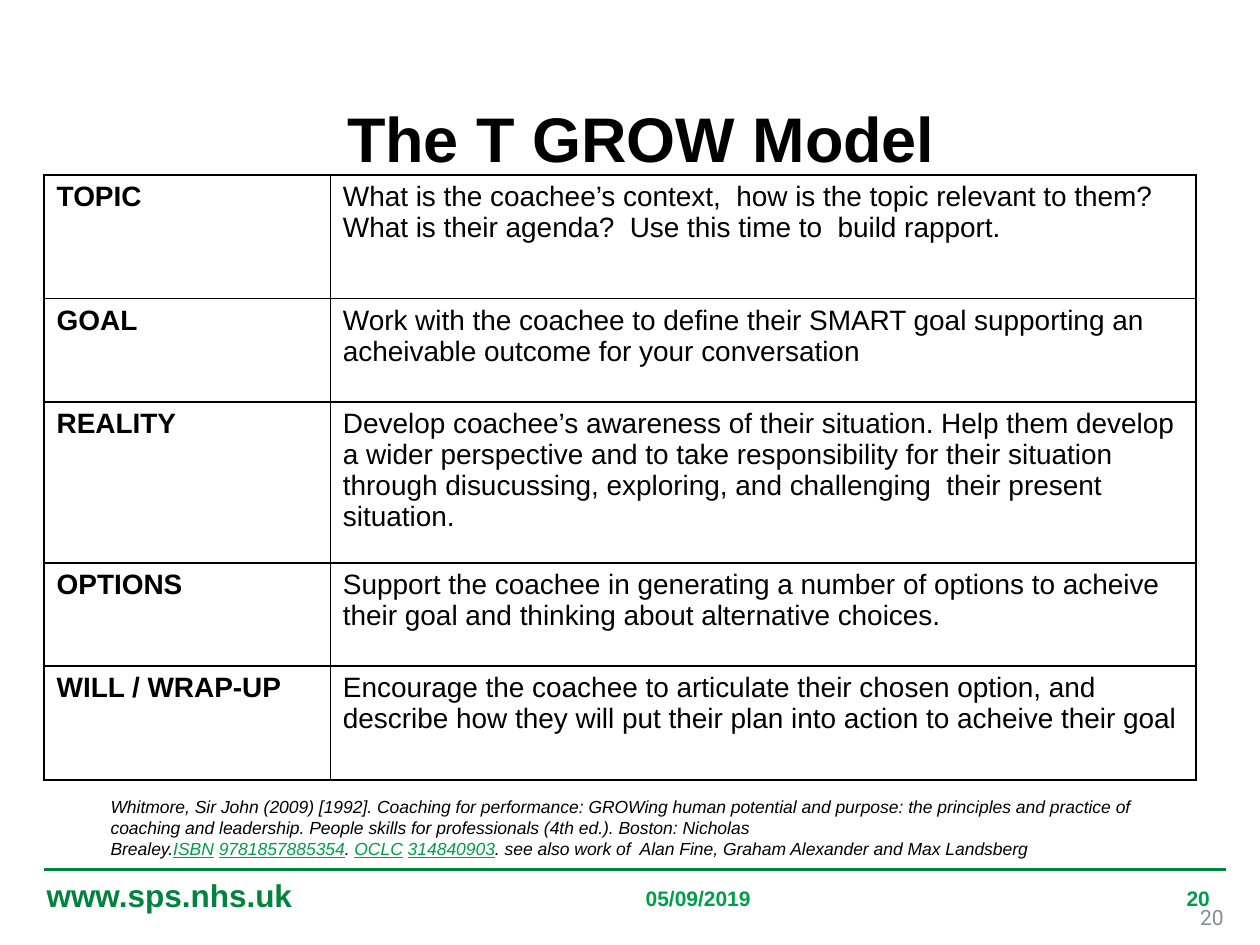
from dataclasses import dataclass

import pptx
import pptx.dml.color
import pptx.enum.shapes
import pptx.enum.text
import pptx.oxml
import pptx.oxml.ns
import pptx.util

Cm = pptx.util.Cm
Pt = pptx.util.Pt
Align = pptx.enum.text.PP_ALIGN

COLOURS = {
    "black": "000000",
    "rule": "01833E",
    "green": "009E49",
    "grey": "898C9C",
}
NBSP = chr(160)


@dataclass
class Label:
    text: str
    left: float
    top: float
    width: float
    height: float
    size: int
    colour: str
    align: Align = Align.LEFT
    bold: bool = True
    face: str = "Arial"


@dataclass
class Stage:
    name: str
    advice: str
    height: float


LABELS = [
    Label("www.sps.nhs.uk", 0.69, 17.53, 11.2, 1.02, 18, "rule"),
    Label("05/09/2019", 10.9, 17.73, 6.35, 0.89, 12, "green", Align.CENTER),
    Label("20", 18.11, 17.73, 6.53, 0.89, 12, "green", Align.RIGHT),
    Label("20", 19.13, 18.11, 5.79, 1.02, 12, "grey", Align.RIGHT, False, "Roboto"),
]

STAGES = [
    Stage("TOPIC", "What is the coachee’s context,  how is the topic relevant to them?  "
          "What is their agenda?  Use this time to  build rapport.", 2.49),
    Stage("GOAL", "Work with the coachee to define their SMART goal supporting an "
          "acheivable outcome for your conversation", 2.08),
    Stage("REALITY", "Develop coachee’s awareness of their situation. Help them develop "
          "a wider perspective and to take responsibility for their situation through "
          "disucussing, exploring, and challenging  their present situation.", 3.25),
    Stage("OPTIONS", "Support the coachee in generating a number of options to acheive "
          "their goal and thinking about alternative choices.", 2.08),
    Stage("WILL / WRAP-UP", "Encourage the coachee to articulate their chosen option, and "
          "describe how they will put their plan into action to acheive their goal", 2.29),
]

# Text and whether it is marked as a reference
CITATION = [
    (f"Whitmore, Sir John{NBSP}(2009) [1992].{NBSP}Coaching for performance: GROWing "
     "human potential and purpose: the principles and practice of coaching and "
     "leadership. People skills for professionals (4th ed.). Boston: Nicholas Brealey.", False),
    ("ISBN", True),
    (NBSP, False),
    ("9781857885354", True),
    (f".{NBSP}", False),
    ("OCLC", True),
    (NBSP, False),
    ("314840903", True),
    (". see also work of  Alan Fine, Graham Alexander and Max Landsberg", False),
]


def colour(name: str) -> pptx.dml.color.RGBColor:
    return pptx.dml.color.RGBColor.from_string(COLOURS[name])


def style(para, size: int, ink: str = "black", bold: bool = False, face: str = "Arial") -> None:
    para.font.name = face
    para.font.size = Pt(size)
    para.font.bold = bold
    para.font.color.rgb = colour(ink)


def add_box(page, left: float, top: float, width: float, height: float):
    box = page.shapes.add_textbox(Cm(left), Cm(top), Cm(width), Cm(height))
    box.text_frame.word_wrap = True
    return box


def add_label(page, label: Label) -> None:
    box = add_box(page, label.left, label.top, label.width, label.height)
    para = box.text_frame.paragraphs[0]
    para.text = label.text
    para.alignment = label.align
    style(para, label.size, label.colour, label.bold, label.face)


def add_title(page) -> None:
    title = page.shapes.title
    title.left, title.top, title.width, title.height = Cm(0.1), Cm(0.53), Cm(25), Cm(2.41)
    frame = title.text_frame
    frame.word_wrap = True
    frame.auto_size = pptx.enum.text.MSO_AUTO_SIZE.NONE
    frame.vertical_anchor = pptx.enum.text.MSO_ANCHOR.TOP
    frame.margin_left, frame.margin_top = Cm(0.9), Cm(1.47)
    frame.margin_bottom = 0
    para = frame.paragraphs[0]
    para.text = "The T GROW Model"
    para.alignment = Align.CENTER
    style(para, 36, bold=True)


def add_rule(page) -> None:
    rule = page.shapes.add_connector(
        pptx.enum.shapes.MSO_CONNECTOR.STRAIGHT, Cm(0.89), Cm(17.53), Cm(24.71), Cm(17.53))
    rule.line.color.rgb = colour("rule")
    rule.line.width = Pt(1.5)
    rule._element.spPr.append(pptx.oxml.parse_xml(
        f"<a:effectLst {pptx.oxml.ns.nsdecls('a')}/>"))


def add_borders(cell) -> None:
    properties = cell._tc.get_or_add_tcPr()
    for position, side in enumerate(("lnL", "lnR", "lnT", "lnB")):
        properties.insert(position, pptx.oxml.parse_xml(
            f'<a:{side} {pptx.oxml.ns.nsdecls("a")} w="{Pt(1)}"><a:solidFill>'
            f'<a:srgbClr val="{COLOURS["black"]}"/></a:solidFill></a:{side}>'))


def add_stages(page, stages: list[Stage]) -> None:
    widths = (5.77, 17.45)
    table = page.shapes.add_table(
        len(stages), 2, Cm(0.89), Cm(3.53), Cm(sum(widths)),
        Cm(sum(stage.height for stage in stages))).table
    table.first_row = table.horz_banding = False
    for column, width in zip(table.columns, widths):
        column.width = Cm(width)
    for row, stage in zip(table.rows, stages):
        row.height = Cm(stage.height)
        for cell, text, bold in zip(row.cells, (stage.name, stage.advice), (True, False)):
            cell.text = text
            cell.fill.background()
            add_borders(cell)
            style(cell.text_frame.paragraphs[0], 16, bold=bold)


def add_citation(page) -> None:
    para = add_box(page, 1.98, 15.93, 21.21, 1.55).text_frame.paragraphs[0]
    style(para, 10)
    para.font.italic = True
    for text, marked in CITATION:
        span = para.add_run()
        span.text = text
        if marked:
            span.font.underline = True
            span.font.color.rgb = colour("green")


def main() -> None:
    deck = pptx.Presentation()
    deck.slide_width, deck.slide_height = Cm(25.4), Cm(19.05)
    page = deck.slides.add_slide(deck.slide_layouts[5])

    # Heading and table
    add_title(page)
    add_stages(page, STAGES)

    # Source and footer
    add_citation(page)
    add_rule(page)
    for label in LABELS:
        add_label(page, label)

    deck.save("out.pptx")


if __name__ == "__main__":
    main()
